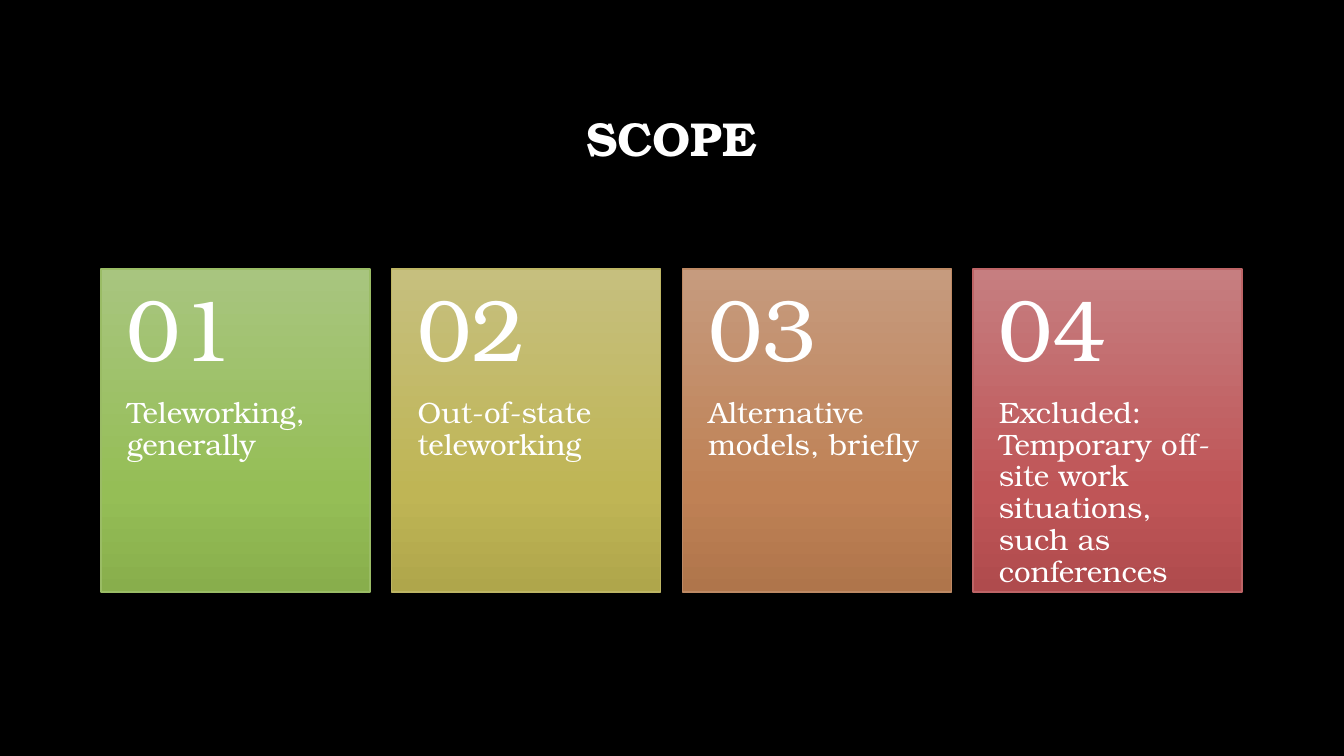
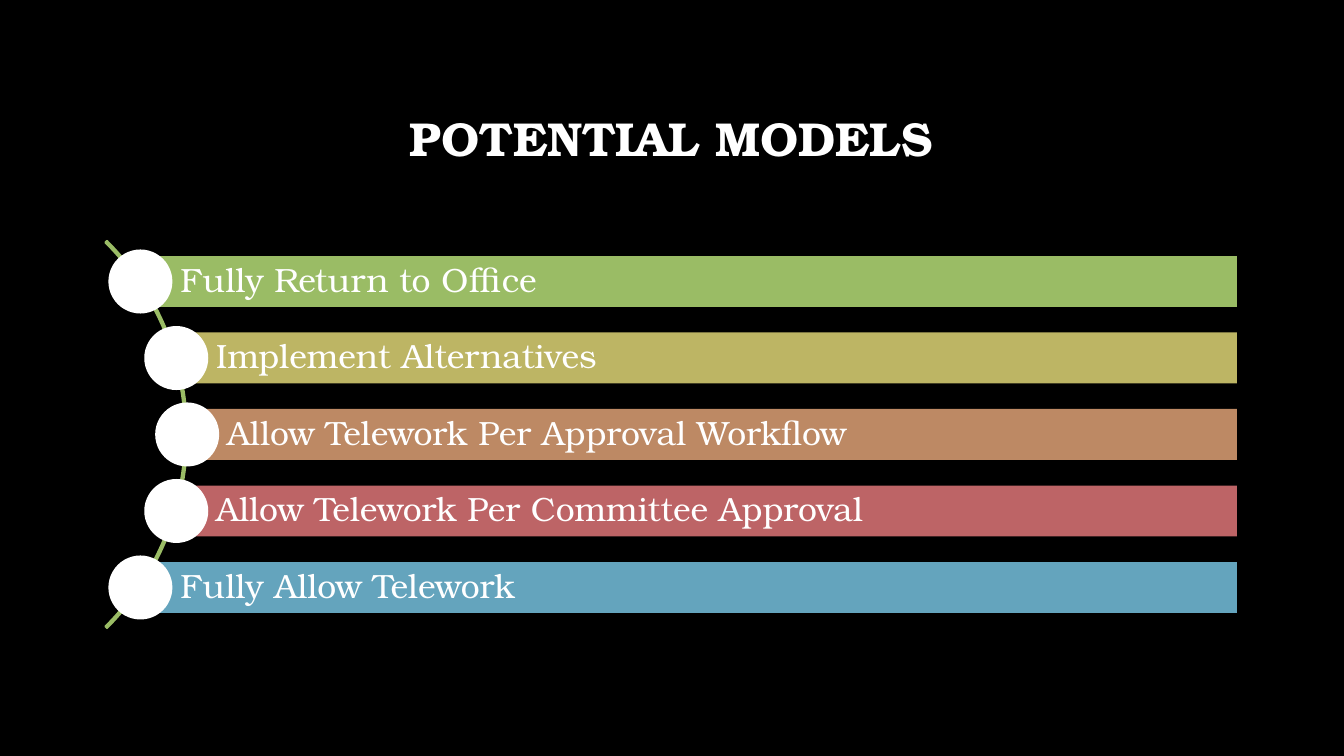
from copy import deepcopy
from math import sqrt

from pptx import Presentation
from pptx.dml.color import RGBColor
from pptx.enum.shapes import MSO_SHAPE
from pptx.enum.text import MSO_ANCHOR, PP_ALIGN
from pptx.oxml.ns import qn
from pptx.util import Emu, Pt

EMU_PER_PX = 914400 / 100.8
FONT = "TeX Gyre Bonum"

BLACK = RGBColor(0x00, 0x00, 0x00)
WHITE = RGBColor(0xFF, 0xFF, 0xFF)
GREEN = RGBColor(0x9A, 0xBC, 0x65)
OLIVE = RGBColor(0xBD, 0xB5, 0x64)
COPPER = RGBColor(0xBD, 0x89, 0x64)
RED = RGBColor(0xBD, 0x64, 0x66)
BLUE = RGBColor(0x64, 0xA4, 0xBD)

STOP_POSITIONS = (0, 0.69, 1)
GREEN_SHADES = (RGBColor(0xA8, 0xC5, 0x7F), RGBColor(0x95, 0xBE, 0x56), RGBColor(0x88, 0xAE, 0x4C))
OLIVE_SHADES = (RGBColor(0xC6, 0xBF, 0x7E), RGBColor(0xBF, 0xB5, 0x55), RGBColor(0xAF, 0xA6, 0x4B))
COPPER_SHADES = (RGBColor(0xC6, 0x9B, 0x7E), RGBColor(0xBF, 0x81, 0x55), RGBColor(0xAF, 0x75, 0x4B))
RED_SHADES = (RGBColor(0xC6, 0x7E, 0x80), RGBColor(0xBF, 0x55, 0x57), RGBColor(0xAF, 0x4B, 0x4D))

# Boxes are left, top, width, height
SLIDE_SIZE = (1344, 756)
TITLE_BOX = (101, 68, 1141, 146)
CARDS_BOX = (101, 269, 1141, 323)
MODELS_BOX = (107, 241, 1130, 387)

SCOPE_CARDS = [
    ("Teleworking, generally", GREEN, GREEN_SHADES),
    ("Out-of-state teleworking", OLIVE, OLIVE_SHADES),
    ("Alternative models, briefly", COPPER, COPPER_SHADES),
    ("Excluded: Temporary off-site work situations, such as conferences", RED, RED_SHADES),
]
MODELS = [
    ("Fully Return to Office", GREEN),
    ("Implement Alternatives", OLIVE),
    ("Allow Telework Per Approval Workflow", COPPER),
    ("Allow Telework Per Committee Approval", RED),
    ("Fully Allow Telework", BLUE),
]


def px(length):
    return Emu(round(length * EMU_PER_PX))


def add_shape(slide, preset, box, fill=None, line=None, line_width=1):
    shape = slide.shapes.add_shape(preset, *map(px, box))
    shape.shadow.inherit = False
    if fill is None:
        shape.fill.background()
    else:
        shape.fill.solid()
        shape.fill.fore_color.rgb = fill
    if line is None:
        shape.line.fill.background()
    else:
        shape.line.color.rgb = line
        shape.line.width = Pt(line_width)
    return shape


def shade_downwards(shape, shades):
    shape.fill.gradient()
    shape.fill.gradient_angle = 270
    stop_list = next(shape.fill._xPr.iter(qn("a:gsLst")))
    stop_list.append(deepcopy(stop_list[0]))
    for stop, position, shade in zip(shape.fill.gradient_stops, STOP_POSITIONS, shades):
        stop.position = position
        stop.color.rgb = shade


def write(shape, text, size, bold=False, align=PP_ALIGN.LEFT,
          anchor=MSO_ANCHOR.MIDDLE, insets=(10, 5, 10, 5)):
    """Fill a shape with one paragraph; insets are left, top, right, bottom."""
    frame = shape.text_frame
    frame.word_wrap = True
    frame.vertical_anchor = anchor
    (frame.margin_left, frame.margin_top,
     frame.margin_right, frame.margin_bottom) = map(px, insets)
    paragraph = frame.paragraphs[0]
    paragraph.alignment = align
    paragraph.line_spacing = 0.9
    run = paragraph.add_run()
    run.text = text
    run.font.name = FONT
    run.font.size = Pt(size)
    run.font.bold = bold
    run.font.color.rgb = WHITE


def add_text(slide, box, text, **text_format):
    write(slide.shapes.add_textbox(*map(px, box)), text, **text_format)


def add_titled_slide(deck, title):
    slide = deck.slides.add_slide(deck.slide_layouts[6])
    slide.background.fill.solid()
    slide.background.fill.fore_color.rgb = BLACK
    add_text(slide, TITLE_BOX, title, size=34, bold=True, align=PP_ALIGN.CENTER)
    return slide


def add_card(slide, box, number, topic, border, shades):
    left, top, width, height = box
    number_height = round(height * 0.4)
    card = add_shape(slide, MSO_SHAPE.RECTANGLE, box, line=border)
    shade_downwards(card, shades)
    add_text(slide, (left, top + number_height, width, height - number_height), topic,
             size=21, anchor=MSO_ANCHOR.TOP, insets=(26, 0, 26, 36))
    add_text(slide, (left, top, width, number_height), f"{number:02}",
             size=62, insets=(26, 18, 26, 18))


def add_card_row(slide, box, cards):
    left, top, width, height = box
    card_width = 269
    step = (width - card_width) / (len(cards) - 1)
    for index, card in enumerate(cards):
        add_card(slide, (left + index * step, top, card_width, height), index + 1, *card)


def add_model_arc(slide, box, models):
    """Hang bars on a quarter circle whose ends touch the box's left corners."""
    left, top, width, height = box
    radius = height / sqrt(2)
    center_x, center_y = left - height / 2, top + height / 2
    arc = add_shape(slide, MSO_SHAPE.BLOCK_ARC,
                    (center_x - radius, center_y - radius, 2 * radius, 2 * radius),
                    line=GREEN, line_width=1.5)
    for index, adjustment in enumerate((189, 27, 0.004)):  # 315°, 45°, hairline
        arc.adjustments[index] = adjustment

    bar_height, node_size = 51, 64
    step = bar_height * 1.5
    for index, (model, color) in enumerate(models):
        offset = (index - (len(models) - 1) / 2) * step
        node_x, node_y = center_x + sqrt(radius ** 2 - offset ** 2), center_y + offset
        bar = add_shape(slide, MSO_SHAPE.RECTANGLE,
                        (node_x, node_y - bar_height / 2, left + width - node_x, bar_height),
                        fill=color)
        write(bar, model, size=24, insets=(40, 7, 7, 7))
        add_shape(slide, MSO_SHAPE.OVAL,
                  (node_x - node_size / 2, node_y - node_size / 2, node_size, node_size),
                  fill=WHITE)


def main():
    deck = Presentation()
    deck.slide_width, deck.slide_height = map(px, SLIDE_SIZE)
    add_card_row(add_titled_slide(deck, "SCOPE"), CARDS_BOX, SCOPE_CARDS)
    add_model_arc(add_titled_slide(deck, "POTENTIAL MODELS"), MODELS_BOX, MODELS)
    deck.save("out.pptx")


if __name__ == "__main__":
    main()
